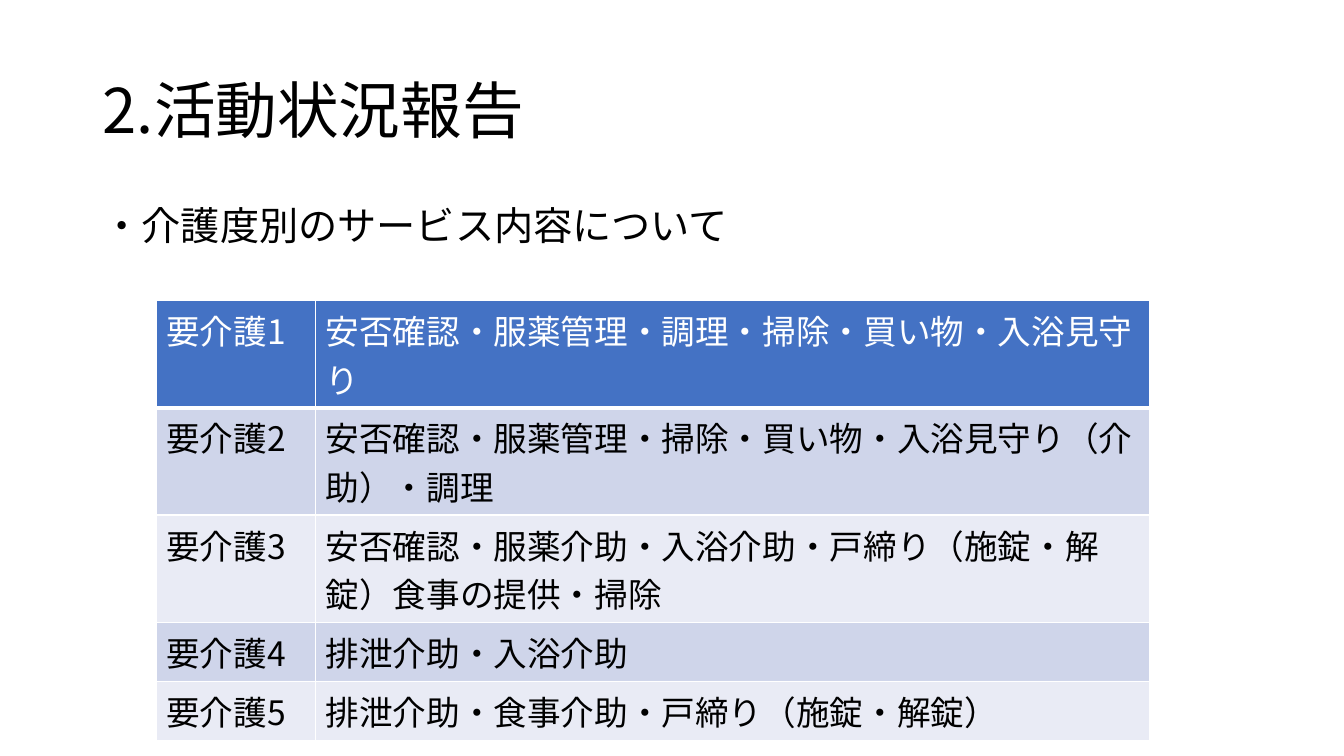
from lxml import etree
from pptx import Presentation
from pptx.dml.color import RGBColor
from pptx.enum.text import MSO_ANCHOR
from pptx.oxml.ns import qn
from pptx.util import Inches, Pt

# Content
TITLE = "2.活動状況報告"
SUBTITLE = "・介護度別のサービス内容について"
SERVICES = [
    ("要介護1", "安否確認・服薬管理・調理・掃除・買い物・入浴見守り"),
    ("要介護2", "安否確認・服薬管理・掃除・買い物・入浴見守り（介助）・調理"),
    ("要介護3", "安否確認・服薬介助・入浴介助・戸締り（施錠・解錠）食事の提供・掃除"),
    ("要介護4", "排泄介助・入浴介助"),
    ("要介護5", "排泄介助・食事介助・戸締り（施錠・解錠）"),
]
COLUMN_WIDTHS = (1.58, 8.27)
TWO_LINES, ONE_LINE = 1.065, 0.585
ROW_HEIGHTS = (TWO_LINES,) * 3 + (ONE_LINE,) * 2

# Style
FONT = "Noto Sans CJK JP"
BLACK = RGBColor(0x00, 0x00, 0x00)
WHITE = RGBColor(0xFF, 0xFF, 0xFF)
HEADER_BLUE = RGBColor(0x44, 0x72, 0xC4)
BANDS = (RGBColor(0xE9, 0xEB, 0xF5), RGBColor(0xCF, 0xD5, 0xEA))


def format_run(run, size, color):
    run.font.size = Pt(size)
    run.font.name = FONT
    run.font.bold = False
    run.font.color.rgb = color
    properties = run.font._element
    properties.set("lang", "ja-JP")
    east_asian = etree.SubElement(properties, qn("a:ea"))
    east_asian.set("typeface", FONT)


def add_text(slide, text, top, height, size, anchor, space_before):
    box = slide.shapes.add_textbox(Inches(0.92), Inches(top), Inches(11.5), Inches(height))
    frame = box.text_frame
    frame.word_wrap = True
    frame.vertical_anchor = anchor
    frame.text = text
    paragraph = frame.paragraphs[0]
    paragraph.line_spacing = 0.9
    paragraph.space_before = Pt(space_before)
    format_run(paragraph.runs[0], size, BLACK)


def add_borders(cell, widths):
    properties = cell._tc.get_or_add_tcPr()
    for side, width in widths.items():
        line = etree.SubElement(properties, qn(f"a:ln{side}"), w=str(Pt(width)))
        fill = etree.SubElement(line, qn("a:solidFill"))
        etree.SubElement(fill, qn("a:srgbClr"), val=str(WHITE))


def add_service_table(slide):
    frame = slide.shapes.add_table(
        len(SERVICES), len(COLUMN_WIDTHS), Inches(1.55), Inches(2.98),
        Inches(sum(COLUMN_WIDTHS)), Inches(sum(ROW_HEIGHTS)))
    table = frame.table
    for column, width in zip(table.columns, COLUMN_WIDTHS):
        column.width = Inches(width)
    for index, (row, height, texts) in enumerate(zip(table.rows, ROW_HEIGHTS, SERVICES)):
        row.height = Inches(height)
        is_header = index == 0
        top = 3 if index == 1 else 1
        bottom = 3 if is_header else 1
        for cell, text in zip(row.cells, texts):
            cell.text = text
            format_run(cell.text_frame.paragraphs[0].runs[0], 24, WHITE if is_header else BLACK)
            add_borders(cell, {"L": 1, "R": 1, "T": top, "B": bottom})
            cell.fill.solid()
            cell.fill.fore_color.rgb = HEADER_BLUE if is_header else BANDS[index % 2]


def main():
    presentation = Presentation()
    presentation.slide_width = Inches(13.33)
    presentation.slide_height = Inches(7.5)
    slide = presentation.slides.add_slide(presentation.slide_layouts[6])

    # Heading, lead line and table
    add_text(slide, TITLE, 0.4, 1.45, 44, MSO_ANCHOR.MIDDLE, 0)
    add_text(slide, SUBTITLE, 2, 0.75, 28, MSO_ANCHOR.TOP, 10)
    add_service_table(slide)
    presentation.save("out.pptx")


if __name__ == "__main__":
    main()
